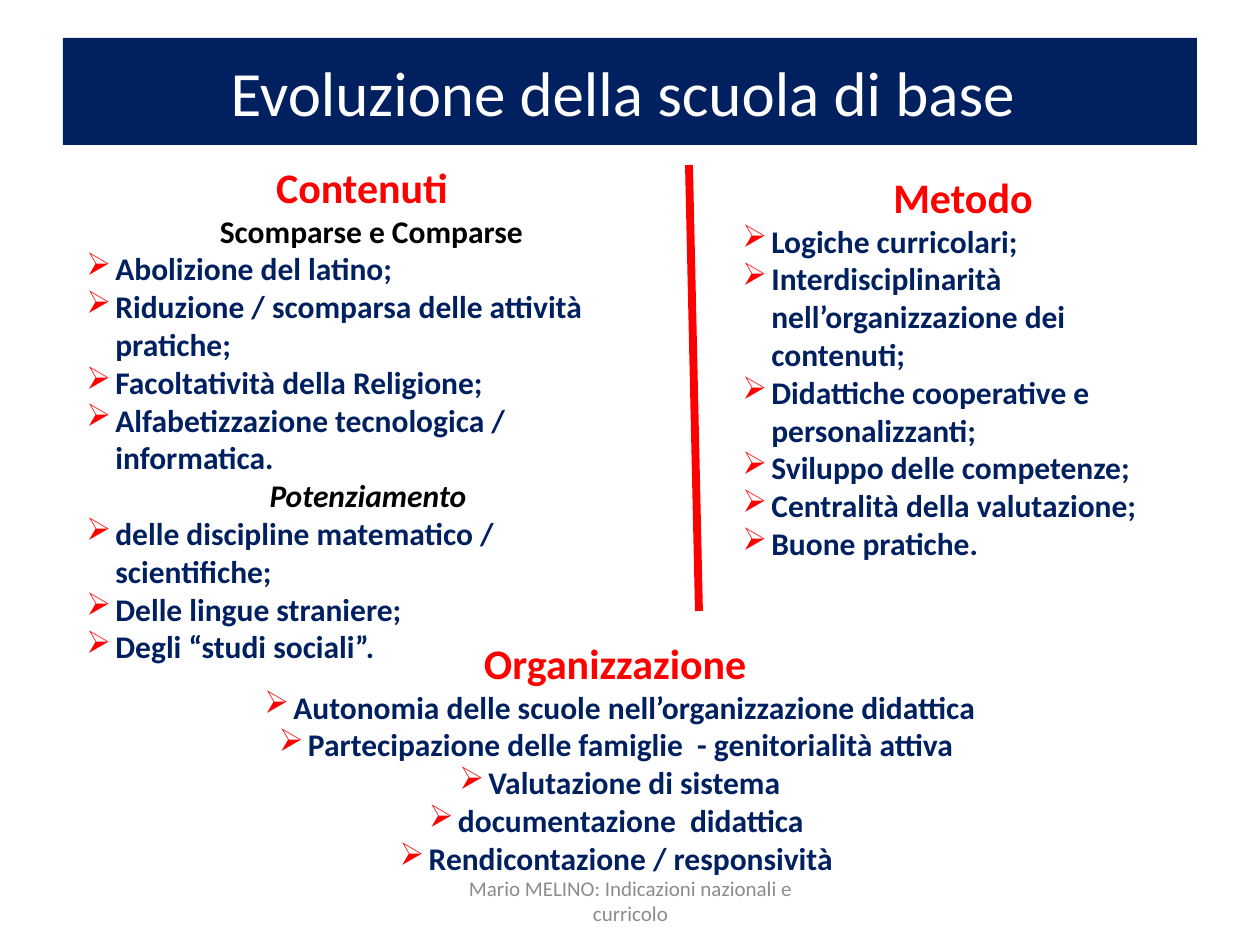
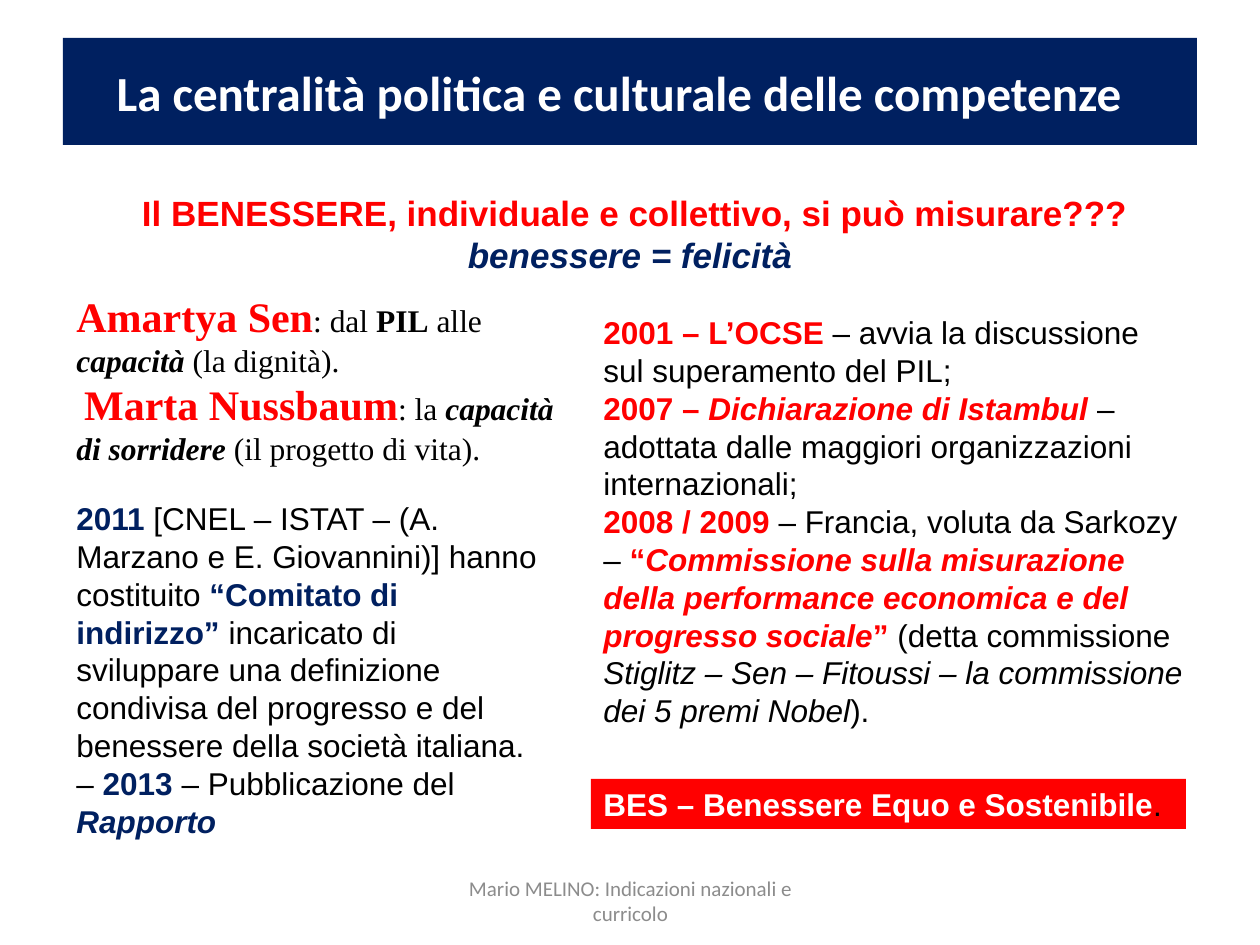
from lxml import etree
from pptx import Presentation
from pptx.dml.color import RGBColor
from pptx.enum.shapes import MSO_CONNECTOR, MSO_SHAPE
from pptx.enum.text import MSO_ANCHOR, MSO_AUTO_SIZE, PP_ALIGN
from pptx.oxml.ns import qn
from pptx.util import Emu, Pt

NAVY = RGBColor(0x00, 0x20, 0x60)
RED = RGBColor(0xFF, 0x00, 0x00)
WHITE = RGBColor(0xFF, 0xFF, 0xFF)
BLACK = RGBColor(0x00, 0x00, 0x00)
GREY = RGBColor(0x8C, 0x8C, 0x8C)
LEFT, CENTER = PP_ALIGN.LEFT, PP_ALIGN.CENTER
TOP, MIDDLE = MSO_ANCHOR.TOP, MSO_ANCHOR.MIDDLE
RECT, STRAIGHT = MSO_SHAPE.RECTANGLE, MSO_CONNECTOR.STRAIGHT
GROW, FIXED = MSO_AUTO_SIZE.SHAPE_TO_FIT_TEXT, MSO_AUTO_SIZE.NONE
PX = 914400 / 126
BULLET, INDENT = "➢", 29

# Run formats
HEAD = dict(size=24, color=RED, bold=True)
SUBHEAD = dict(bold=True)
SUBHEAD_IT = dict(bold=True, italic=True)
ITEM = dict(color=NAVY, bold=True)
PLAIN = {}
STRONG = dict(bold=True)
ITALIC = dict(italic=True)
STRONG_IT = dict(bold=True, italic=True)
KEY = dict(color=RED, bold=True)
KEY_IT = dict(color=RED, bold=True, italic=True)
NOTE = dict(color=NAVY, bold=True)
NOTE_IT = dict(color=NAVY, bold=True, italic=True)

# Shared frame
BAND = (63, 38, 1134, 107)
FOOTER_BOX = (431, 876, 399, 50)
FOOTER = "Mario MELINO: Indicazioni nazionali e curricolo"

# Slide 1: each column is (box, item alignment, lines); a plain string is a bullet item
EVOLUTION_TITLE = "Evoluzione della scuola di base "
DIVIDER = (689, 165, 699, 611)
COLUMNS = [
    ((74, 155, 595, 484), LEFT, [
        ("Contenuti  ", HEAD),
        ("Scomparse e Comparse", SUBHEAD),
        "Abolizione del latino;",
        "Riduzione / scomparsa delle attività pratiche;",
        "Facoltatività della Religione;",
        "Alfabetizzazione tecnologica /  informatica.",
        ("Potenziamento ", SUBHEAD_IT),
        "delle discipline matematico / scientifiche;",
        "Delle lingue straniere;",
        "Degli “studi sociali”.",
    ]),
    ((730, 165, 466, 369), LEFT, [
        ("Metodo", HEAD),
        "Logiche curricolari;",
        "Interdisciplinarità nell’organizzazione dei contenuti;",
        "Didattiche cooperative e personalizzanti;",
        "Sviluppo delle competenze;",
        "Centralità della valutazione;",
        "Buone pratiche.",
    ]),
    ((84, 631, 1072, 255), CENTER, [
        ("Organizzazione ", HEAD),
        "Autonomia delle scuole nell’organizzazione didattica",
        "Partecipazione delle famiglie  - genitorialità attiva ",
        "Valutazione di sistema",
        "documentazione  didattica ",
        "Rendicontazione / responsività ",
    ]),
]

# Slide 2: each block is (box, font, alignment, paragraphs of runs)
SKILLS_TITLE = "La centralità politica e culturale delle competenze  "
BLOCKS = [
    ((64, 284, 507, 190), "Times New Roman", LEFT, [
        [("Amartya Sen", HEAD), (": dal ", PLAIN), ("PIL", STRONG), (" alle ", PLAIN),
         ("capacità", STRONG_IT), (" (la dignità).", PLAIN)],
        [(" ", PLAIN), ("Marta Nussbaum", HEAD), (": la ", PLAIN),
         ("capacità di sorridere", STRONG_IT), (" (il progetto di vita).", PLAIN)],
    ]),
    ((64, 185, 1142, 97), "Arial", CENTER, [
        [("Il BENESSERE, individuale e collettivo, si può misurare???", dict(KEY, size=20))],
        [("benessere = felicità ", dict(NOTE_IT, size=20))],
    ]),
    ((591, 307, 605, 432), "Arial", LEFT, [
        [("2001 – L’OCSE ", KEY), ("– avvia la discussione sul superamento del PIL;", PLAIN)],
        [("2007 – ", KEY), ("Dichiarazione di Istambul ", KEY_IT),
         ("– adottata dalle maggiori organizzazioni internazionali;", PLAIN)],
        [("2008 / 2009 ", KEY), ("– Francia, voluta da Sarkozy – ", PLAIN), ("“", KEY),
         ("Commissione sulla misurazione della performance economica e del progresso sociale",
          KEY_IT),
         ("” ", KEY), ("(detta commissione ", PLAIN),
         ("Stiglitz – Sen – Fitoussi – la commissione dei 5 premi Nobel", ITALIC),
         (").", PLAIN)],
    ]),
    ((64, 493, 496, 357), "Arial", LEFT, [
        [("2011", NOTE),
         (" [CNEL – ISTAT – (A. Marzano e E. Giovannini)] hanno costituito ", PLAIN),
         ("“Comitato di indirizzo” ", NOTE),
         ("incaricato di sviluppare una definizione condivisa del progresso e del benessere "
          "della società italiana. – ", PLAIN),
         ("2013", NOTE), (" – Pubblicazione del ", PLAIN), ("Rapporto", NOTE_IT)],
    ]),
]
BES_BOX = (591, 779, 595, 50)
BES = [("BES – Benessere Equo e Sostenibile", dict(color=WHITE, bold=True)), (".", PLAIN)]


def px(*values):
    return [Emu(round(v * PX)) for v in values]


def add_run(p, text, font="Calibri", size=18, color=BLACK, bold=False, italic=False):
    r = p.add_run()
    r.text = text
    r.font.name, r.font.size = font, Pt(size)
    r.font.color.rgb = color
    r.font.bold, r.font.italic = bold, italic


def add_bullet(p):
    pPr = p._p.get_or_add_pPr()
    indent = px(INDENT)[0]
    pPr.set("marL", str(indent))
    pPr.set("indent", str(-indent))
    clr = etree.SubElement(pPr, qn("a:buClr"))
    etree.SubElement(clr, qn("a:srgbClr")).set("val", str(RED))
    etree.SubElement(pPr, qn("a:buChar")).set("char", BULLET)


def add_box(s, box, fill=None, anchor=TOP, auto_size=GROW):
    """Add a text box, or a filled rectangle, and return its text frame."""
    if fill is None:
        sp = s.shapes.add_textbox(*px(*box))
    else:
        sp = s.shapes.add_shape(RECT, *px(*box))
        sp.shadow.inherit = False
        sp.fill.solid()
        sp.fill.fore_color.rgb = fill
        sp.line.fill.background()
    tf = sp.text_frame
    tf.word_wrap = True
    tf.vertical_anchor, tf.auto_size = anchor, auto_size
    return tf


def add_paragraph(tf, runs, align=LEFT, font="Calibri", bullet=False):
    first = tf.paragraphs[0]
    p = tf.add_paragraph() if first.runs else first
    p.alignment = align
    if bullet:
        add_bullet(p)
    for text, style in runs:
        add_run(p, text, font=font, **style)


def add_slide(prs, title, **style):
    """Add a slide with the shared title band and footer."""
    s = prs.slides.add_slide(prs.slide_layouts[6])
    tf = add_box(s, BAND, fill=NAVY, anchor=MIDDLE, auto_size=FIXED)
    add_paragraph(tf, [(title, dict(style, color=WHITE))], CENTER)
    tf = add_box(s, FOOTER_BOX, anchor=MIDDLE, auto_size=FIXED)
    add_paragraph(tf, [(FOOTER, dict(size=12, color=GREY))], CENTER)
    return s


def build_evolution(prs):
    s = add_slide(prs, EVOLUTION_TITLE, size=36)
    line = s.shapes.add_connector(STRAIGHT, *px(*DIVIDER))
    line.line.color.rgb, line.line.width = RED, Pt(4.5)
    etree.SubElement(line._element.spPr, qn("a:effectLst"))
    for box, align, lines in COLUMNS:
        tf = add_box(s, box)
        for entry in lines:
            if isinstance(entry, str):
                add_paragraph(tf, [(entry, ITEM)], align, bullet=True)
            else:
                add_paragraph(tf, [entry], CENTER)


def build_skills(prs):
    s = add_slide(prs, SKILLS_TITLE, size=28, bold=True)
    for box, font, align, paragraphs in BLOCKS:
        tf = add_box(s, box)
        for runs in paragraphs:
            add_paragraph(tf, runs, align, font)
    add_paragraph(add_box(s, BES_BOX, fill=RED), BES, font="Arial")


def main():
    prs = Presentation()
    prs.slide_width, prs.slide_height = px(1260, 945)
    build_evolution(prs)
    build_skills(prs)
    prs.save("out.pptx")


if __name__ == "__main__":
    main()
